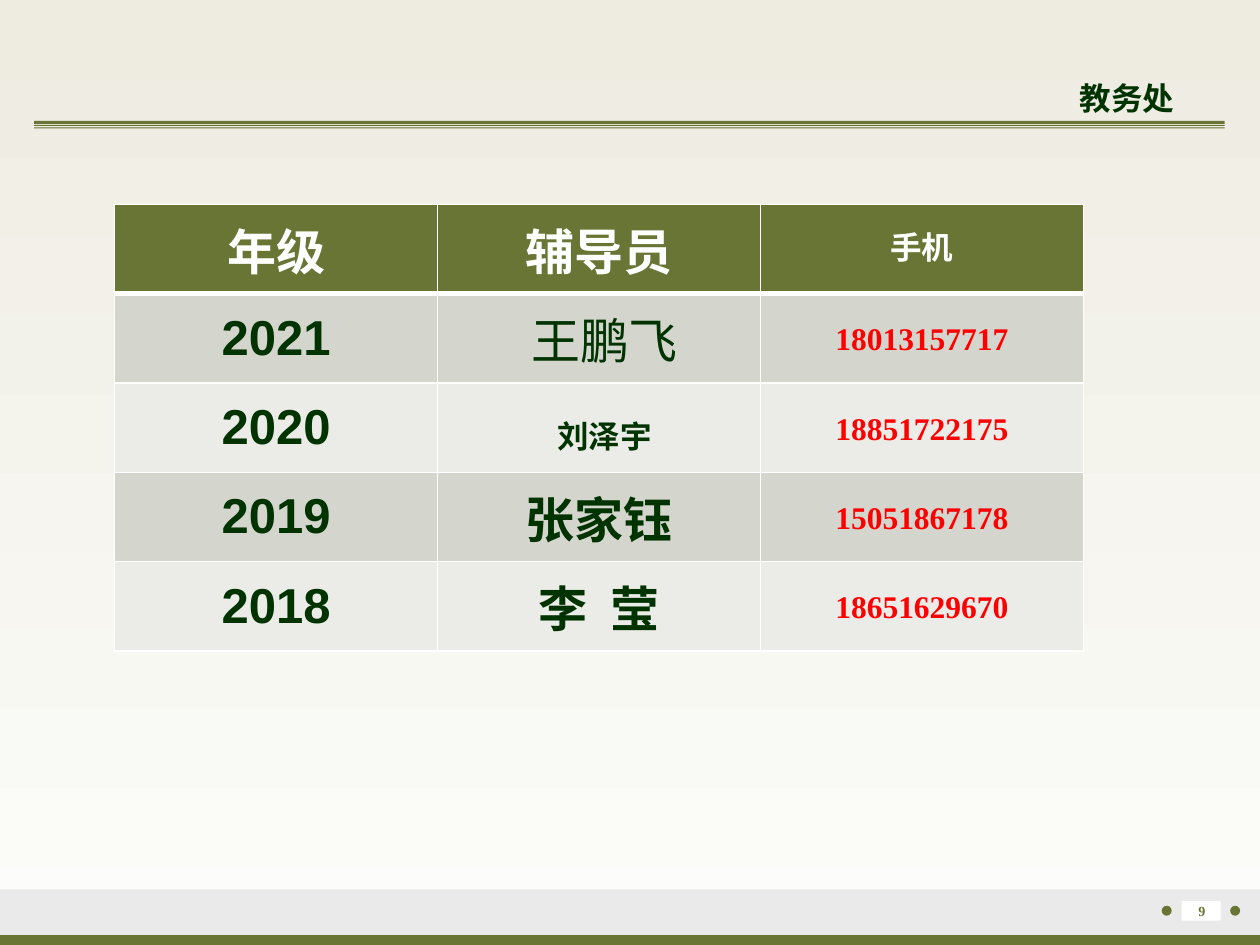
from lxml import etree
from pptx import Presentation
from pptx.dml.color import RGBColor
from pptx.enum.shapes import MSO_SHAPE
from pptx.enum.text import MSO_ANCHOR, PP_ALIGN
from pptx.oxml.ns import qn
from pptx.util import Cm, Pt

RECT, OVAL = MSO_SHAPE.RECTANGLE, MSO_SHAPE.OVAL
LEFT, CENTER = PP_ALIGN.LEFT, PP_ALIGN.CENTER
TOP, MIDDLE = MSO_ANCHOR.TOP, MSO_ANCHOR.MIDDLE
SANS, SERIF, HAN = "Arial", "Times New Roman", "Noto Sans CJK SC"
COLORS = {
    "olive": "697535", "forest": "003300", "red": "FF0000", "white": "FFFFFF",
    "gray": "EAEAEA", "dark": "D4D6CE", "light": "EBECE8",
    "cream": "EEECE1", "pale": "FCFCFA",
}
HEADS = ["年级", "辅导员", "手机"]
STAFF = [
    ("2021", " 王鹏飞", "18013157717"),
    ("2020", " 刘泽宇", "18851722175"),
    ("2019", "张家钰", "15051867178"),
    ("2018", "李  莹", "18651629670"),
]


def rgb(name):
    return RGBColor.from_string(COLORS[name])


def write(para, text, size=28, font=SANS, color="forest", bold=True, align=CENTER):
    para.alignment = align
    run = para.add_run()
    run.text = text
    run.font.size, run.font.name, run.font.bold = Pt(size), font, bold
    run.font.color.rgb = rgb(color)
    east = etree.SubElement(run.font._element, qn("a:ea"))
    east.set("typeface", HAN)


def shape(slide, kind, box, color):
    item = slide.shapes.add_shape(kind, *map(Cm, box))
    item.shadow.inherit = False
    item.fill.solid()
    item.fill.fore_color.rgb = rgb(color)
    item.line.fill.background()


def label(slide, box, text, anchor=TOP, inset=0.25, **style):
    frame = slide.shapes.add_textbox(*map(Cm, box)).text_frame
    frame.word_wrap = True
    frame.vertical_anchor = anchor
    frame.margin_left = Cm(inset)
    write(frame.paragraphs[0], text, **style)


def paint(slide):
    fill = slide.background.fill
    fill.gradient()
    fill.gradient_angle = 270
    for stop, name, place in zip(fill.gradient_stops, ("cream", "pale"), (0, 1)):
        stop.color.rgb = rgb(name)
        stop.position = place


def header(slide, x, y, w):
    for gap, high in ((0, 0.06), (0.08, 0.02), (0.13, 0.02)):
        shape(slide, RECT, (x, y + gap, w, high), "olive")
    label(slide, (x + 20.32, y - 1.93, 6.1, 2.92), "教务处", anchor=MIDDLE,
          inset=0.76, size=18, font=HAN, align=LEFT)


def footer(slide, x, y, w, h):
    shape(slide, RECT, (x, y, w, h), "gray")
    shape(slide, RECT, (x, y + h - 0.2, w, 0.2), "olive")
    for dot in (23.42, 24.8):
        shape(slide, OVAL, (x + dot, y + 0.33, 0.2, 0.2), "olive")
    shape(slide, RECT, (x + 23.82, y + 0.23, 0.79, 0.4), "white")
    label(slide, (x + 23.47, y + 0.13, 1.52, 0.99), "9",
          size=8, font=SERIF, color="olive")


def border(cell, base):
    props = cell._tc.get_or_add_tcPr()
    for side, width in (("L", 1), ("R", 1), ("T", 1), ("B", base)):
        line = etree.SubElement(props, qn("a:ln" + side), w=str(Pt(width)))
        fill = etree.SubElement(line, qn("a:solidFill"))
        etree.SubElement(fill, qn("a:srgbClr"), val=COLORS["white"])


def fill_cell(cell, row, col, text):
    head, phone = row == 0, col == 2
    border(cell, 3 if head else 1)
    cell.fill.solid()
    cell.fill.fore_color.rgb = rgb("olive" if head else "dark" if row % 2 else "light")
    cell.vertical_anchor = MIDDLE
    para = cell.text_frame.paragraphs[0]
    color = "white" if head else "red" if phone else "forest"
    if phone:
        cell.margin_left = cell.margin_right = Cm(0.18)
        cell.margin_top = cell.margin_bottom = 0
        para.line_spacing = Pt(22)
        write(para, text, size=18, font=SERIF, color=color)
    elif (row, col) == (2, 1):
        write(para, text[0], bold=False)
        write(para, text[1:], size=18, font=SERIF)
    else:
        write(para, text, color=color, bold=(row, col) != (1, 1))


def roster(slide, x, y, w, h):
    rows = [HEADS, *STAFF]
    box = map(Cm, (x, y, w, h))
    table = slide.shapes.add_table(len(rows), len(HEADS), *box).table
    for col in table.columns:
        col.width = Cm(w / len(HEADS))
    for r, values in enumerate(rows):
        table.rows[r].height = Cm(h / len(rows))
        for c, text in enumerate(values):
            fill_cell(table.cell(r, c), r, c, text)


def main():
    deck = Presentation()
    deck.slide_width, deck.slide_height = Cm(25.4), Cm(19.05)
    slide = deck.slides.add_slide(deck.slide_layouts[6])
    paint(slide)
    footer(slide, 0, 17.93, 25.4, 1.12)
    header(slide, 0.69, 2.44, 24)
    roster(slide, 2.31, 4.12, 19.53, 9)
    deck.save("out.pptx")


if __name__ == "__main__":
    main()
